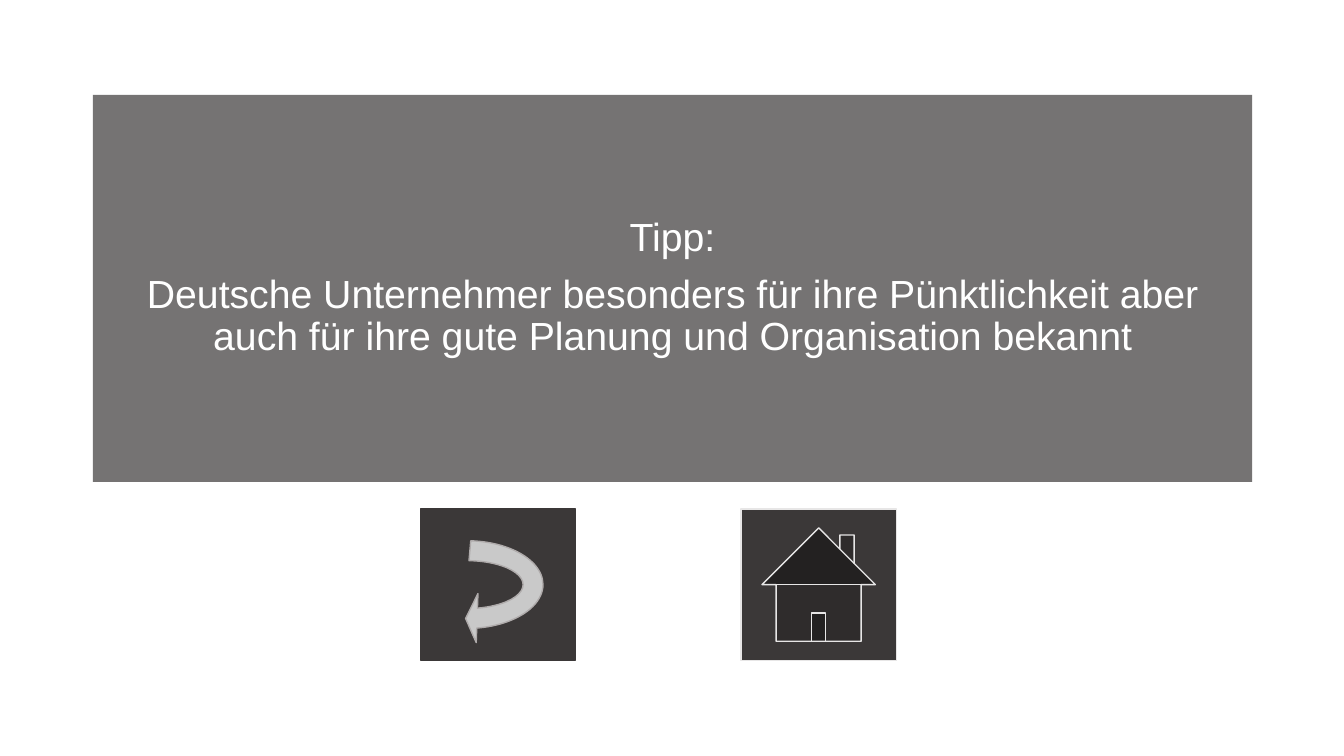
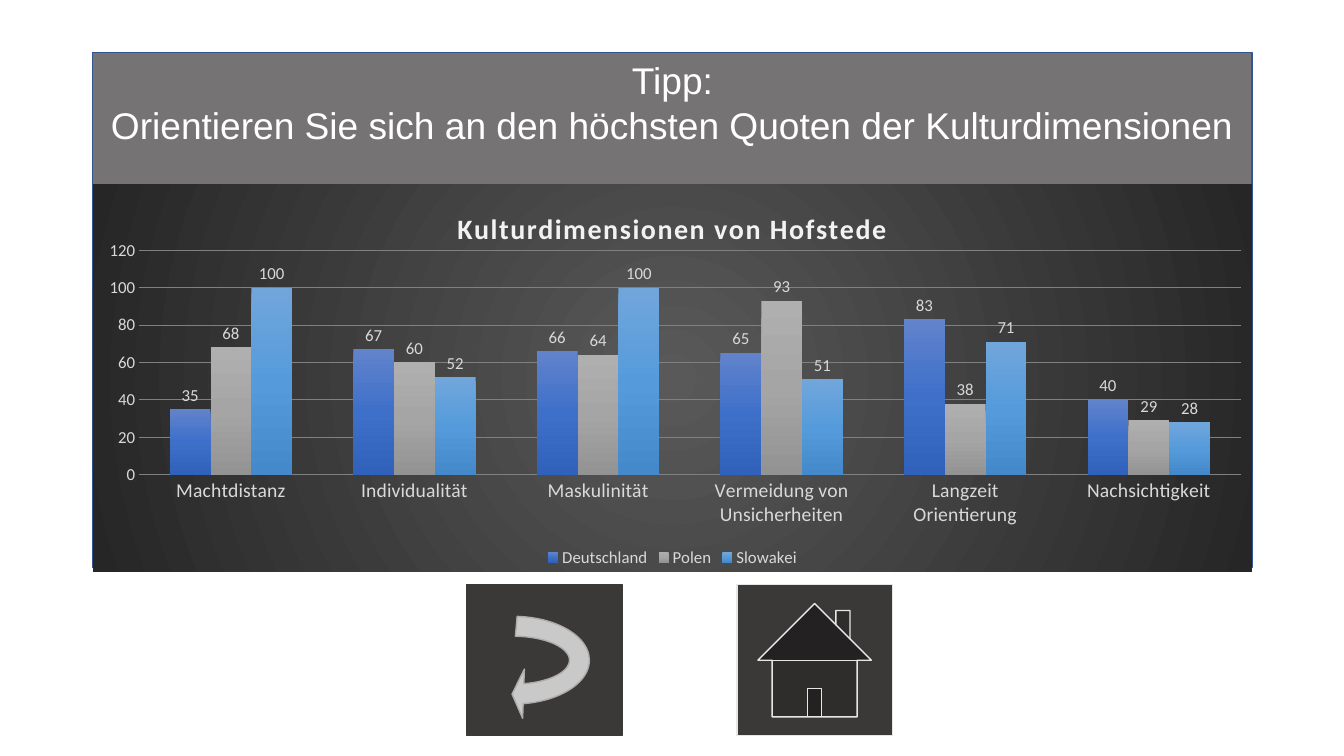
from lxml import etree
from pptx import Presentation, util as u
from pptx.chart.data import CategoryChartData
from pptx.dml.color import RGBColor
from pptx.enum import chart as ch, shapes, text
from pptx.oxml import parse_xml
from pptx.oxml.ns import nsdecls, qn

DARK, WHITE, SILVER, LABEL = "3B3838", "FFFFFF", "C9C9C9", "D9D9D9"
PANEL_LEFT, PANEL_WIDTH = 0.92, 11.5
RADIAL = ('<a:path path="circle"><a:fillToRect l="50000" t="50000" '
          'r="50000" b="50000"/></a:path>')
DOWNWARD = '<a:lin ang="5400000" scaled="0"/>'

CATEGORIES = ["Machtdistanz", "Individualität", "Maskulinität",
              "Vermeidung von Unsicherheiten", "Langzeit Orientierung",
              "Nachsichtigkeit"]
SERIES = [
    ("Deutschland", (35, 67, 66, 65, 83, 40), ("6183CB", "3E70CA", "3062BB")),
    ("Polen", (68, 60, 64, 93, 38, 29), ("AFAFAF", "A5A5A5", "939393")),
    ("Slowakei", (100, 52, 100, 51, 71, 28), ("71A6DB", "559BDB", "448ACA")),
]


def rgb(color):
    return RGBColor.from_string(color)


def apply(target, **values):
    for name, value in values.items():
        setattr(target, name, value)


def set_font(font, size, color, name="Calibri", bold=False):
    apply(font, size=u.Pt(size), name=name, bold=bold)
    font.color.rgb = rgb(color)


def gradient(colors, direction):
    """Return a gradient fill element with evenly spaced stops."""
    stops = "".join(
        f'<a:gs pos="{100000 * i // (len(colors) - 1)}"><a:srgbClr val="{c}"/></a:gs>'
        for i, c in enumerate(colors))
    return parse_xml(f'<a:gradFill {nsdecls("a")} rotWithShape="1">'
                     f'<a:gsLst>{stops}</a:gsLst>{direction}</a:gradFill>')


def set_layout(parent, **values):
    """Place a chart part by fractions of the chart area."""
    layout = parent.find(qn("c:layout"))
    if layout is None:
        layout = etree.Element(qn("c:layout"))
        tx = parent.find(qn("c:tx"))
        if tx is None:
            parent.insert(0, layout)
        else:
            tx.addnext(layout)
    manual = etree.SubElement(layout, qn("c:manualLayout"))
    for tag, value in values.items():
        etree.SubElement(manual, qn(f"c:{tag}")).set("val", str(value))


class Deck:
    """Holds the presentation, its style and the current slide."""

    def __init__(self):
        self.prs = Presentation()
        apply(self.prs, slide_width=u.Inches(13.33), slide_height=u.Inches(7.5))

    def slide(self, layout):
        self.s = self.prs.slides.add_slide(self.prs.slide_layouts[layout])

    def fill(self, sp, color, opacity=100):
        sp.fill.solid()
        sp.fill.fore_color.rgb = rgb(color)
        if opacity < 100:
            clr = sp._element.spPr.find(qn("a:solidFill")).find(qn("a:srgbClr"))
            etree.SubElement(clr, qn("a:alpha")).set("val", str(opacity * 1000))

    def shape(self, kind, box, color, line, opacity=100):
        sp = self.s.shapes.add_shape(kind, *map(u.Inches, box))
        sp.shadow.inherit = False
        self.fill(sp, color, opacity)
        sp.line.color.rgb = rgb(line)
        sp.line.width = u.Pt(1)
        return sp

    def add_lines(self, sp, lines, size, anchor, spacing=1.0, gap=0):
        tf = sp.text_frame
        apply(tf, word_wrap=True, auto_size=text.MSO_AUTO_SIZE.NONE,
              vertical_anchor=anchor)
        for i, line in enumerate(lines):
            p = tf.paragraphs[0] if i == 0 else tf.add_paragraph()
            pPr = p._p.get_or_add_pPr()
            pPr.set("marL", "0")
            pPr.set("indent", "0")
            etree.SubElement(pPr, qn("a:buNone"))
            apply(p, alignment=text.PP_ALIGN.CENTER, line_spacing=spacing,
                  space_before=u.Pt(gap if i else 0))
            r = p.add_run()
            r.text = line
            set_font(r.font, size, WHITE, "Arial")

    def body(self, lines, top, height):
        title = self.s.shapes.title._element
        title.getparent().remove(title)
        sp = self.s.placeholders[1]
        apply(sp, left=u.Inches(PANEL_LEFT), top=u.Inches(top),
              width=u.Inches(PANEL_WIDTH), height=u.Inches(height))
        self.fill(sp, DARK, 70)
        self.add_lines(sp, lines, 28, text.MSO_ANCHOR.MIDDLE, 0.9, 10)

    def panel(self, lines, top, height):
        sp = self.shape(shapes.MSO_SHAPE.RECTANGLE,
                        (PANEL_LEFT, top, PANEL_WIDTH, height), DARK, "325491", 70)
        self.add_lines(sp, lines, 26.5, text.MSO_ANCHOR.TOP)

    def buttons(self, back, home, top):
        size = (1.54, 1.5)
        self.shape(shapes.MSO_SHAPE.RECTANGLE, (back, top, *size), DARK, DARK)
        arrow = self.shape(shapes.MSO_SHAPE.CIRCULAR_ARROW,
                           (back - 0.12, top - 0.15, 1.16, 1.8), SILVER, "AFABAB")
        arrow.rotation = 90
        for i, value in enumerate((0.17, 11.42, 205.79, 111.05, 0.21)):
            arrow.adjustments[i] = value
        self.shape(shapes.MSO_SHAPE.ACTION_BUTTON_HOME, (home, top, *size),
                   DARK, "E7E6E6")

    def chart(self, title, top, height):
        data = CategoryChartData()
        data.categories = CATEGORIES
        for name, values, _ in SERIES:
            data.add_series(name, values)
        box = map(u.Inches, (PANEL_LEFT, top, PANEL_WIDTH, height))
        chart = self.s.shapes.add_chart(
            ch.XL_CHART_TYPE.COLUMN_CLUSTERED, *box, data).chart
        set_font(chart.font, 10, LABEL)

        spPr = parse_xml(f'<c:spPr {nsdecls("c", "a")}><a:ln><a:noFill/></a:ln></c:spPr>')
        spPr.insert(0, gradient(("595959", "262626"), RADIAL))
        chart._chartSpace.chart.addnext(spPr)

        chart.has_title = True
        p = chart.chart_title.text_frame.paragraphs[0]
        r = p.add_run()
        r.text = title
        set_font(r.font, 20, "F2F2F2", bold=True)
        r._r.get_or_add_rPr().set("spc", "100")
        set_layout(chart.chart_title._element, xMode="edge", yMode="edge",
                   x=0.31, y=0.05)

        plot = chart.plots[0]
        apply(plot, gap_width=150, overlap=0, vary_by_categories=False)
        set_layout(chart._chartSpace.chart.plotArea, layoutTarget="inner",
                   xMode="edge", yMode="edge", x=0.04, y=0.17, w=0.95, h=0.58)
        for ser, (_, _, colors) in zip(plot.series, SERIES):
            ser.format.fill.background()
            spPr = ser._element.spPr
            spPr.replace(spPr.find(qn("a:noFill")), gradient(colors, DOWNWARD))
            labels = ser.data_labels
            apply(labels, show_value=True,
                  position=ch.XL_LABEL_POSITION.OUTSIDE_END)
            set_font(labels.font, 12, LABEL)

        for axis, size in ((chart.category_axis, 14), (chart.value_axis, 12)):
            apply(axis, major_tick_mark=ch.XL_TICK_MARK.NONE,
                  minor_tick_mark=ch.XL_TICK_MARK.NONE)
            axis.format.line.fill.background()
            set_font(axis.tick_labels.font, size, LABEL)
        apply(chart.value_axis, minimum_scale=0, maximum_scale=120, major_unit=20)
        grid = chart.value_axis.major_gridlines.format.line
        grid.color.rgb = rgb("808080")
        grid.width = u.Pt(0.75)

        chart.has_legend = True
        apply(chart.legend, position=ch.XL_LEGEND_POSITION.BOTTOM,
              include_in_layout=False)
        set_font(chart.legend.font, 12, LABEL)


def main():
    deck = Deck()

    deck.slide(1)
    deck.body(["Tipp:", "Deutsche Unternehmer besonders für ihre Pünktlichkeit aber "
               "auch für ihre gute Planung und Organisation bekannt"], 0.94, 3.84)
    deck.buttons(back=4.17, home=7.35, top=5.05)

    deck.slide(6)
    deck.buttons(back=4.63, home=7.31, top=5.8)
    deck.panel(["Tipp:", "Orientieren Sie sich an den höchsten Quoten der "
                "Kulturdimensionen"], 0.52, 5.11)
    deck.chart("Kulturdimensionen von Hofstede", 1.83, 3.84)

    deck.prs.save("out.pptx")


if __name__ == "__main__":
    main()
